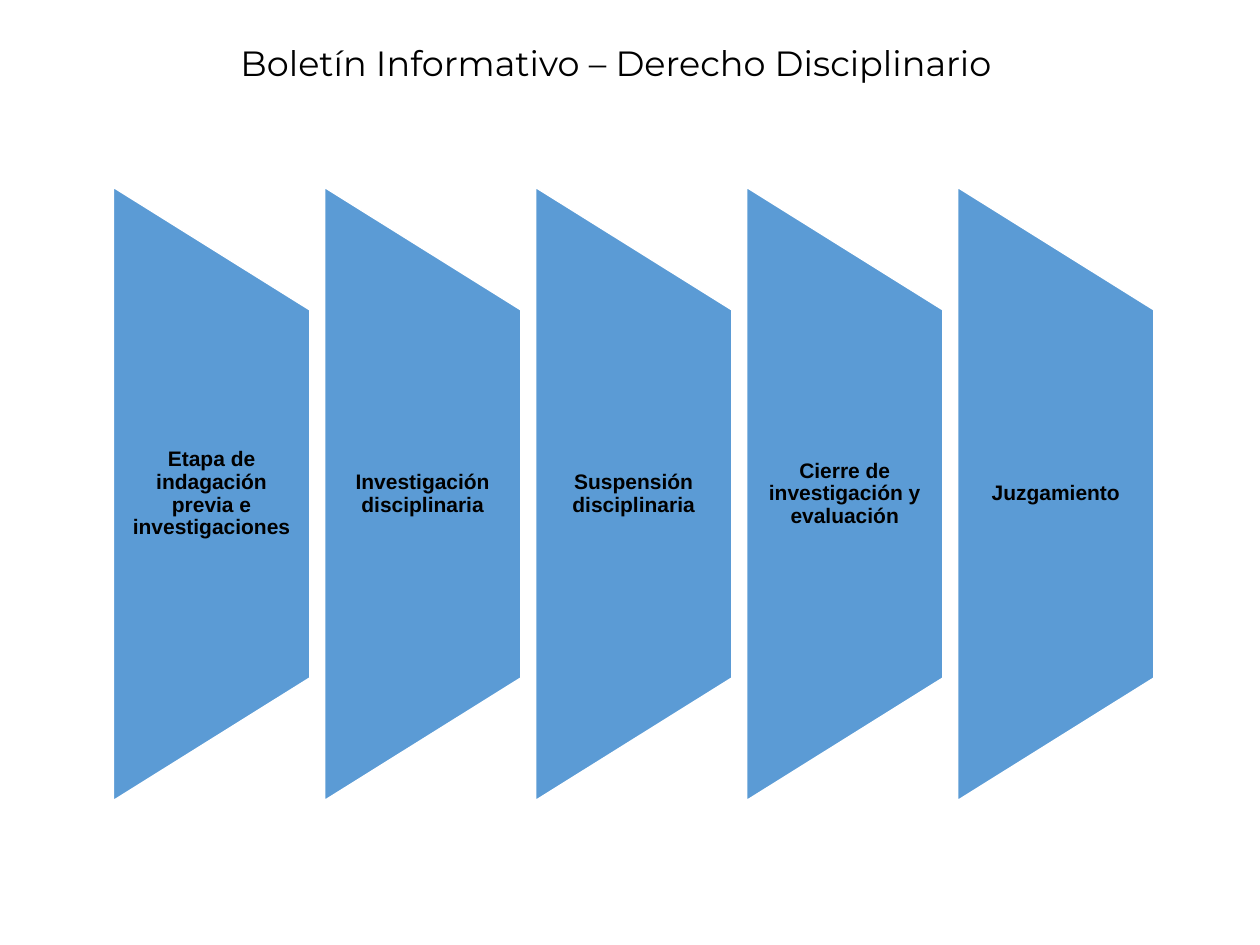
from pptx import Presentation
from pptx.dml.color import RGBColor
from pptx.enum.shapes import MSO_SHAPE as SHAPE
from pptx.enum.text import MSO_ANCHOR as ANCHOR, PP_ALIGN as ALIGN
from pptx.util import Inches, Pt

TITLE = "Boletín Informativo – Derecho Disciplinario"
STAGES = [
    "Etapa de indagación previa e investigaciones",
    "Investigación disciplinaria",
    "Suspensión disciplinaria",
    "Cierre de investigación y evaluación",
    "Juzgamiento",
]
BLUE, WHITE, BLACK = "5B9BD5", "FFFFFF", "000000"

# Stage columns, in inches
LEFT, MIDDLE = 0.9, 3.92
STAGE_W, STAGE_H, LABEL_H = 1.56, 4.87, 2.92
PITCH = 1.675


def rgb(value):
    return RGBColor.from_string(value)


def add_text(shapes, text, box, font, size, bold=False, inset=(0.1, 0.05)):
    tb = shapes.add_textbox(*map(Inches, box))
    tf = tb.text_frame
    tf.word_wrap = True
    tf.vertical_anchor = ANCHOR.MIDDLE
    tf.margin_left = tf.margin_right = Inches(inset[0])
    tf.margin_top = tf.margin_bottom = Inches(inset[1])
    p = tf.paragraphs[0]
    p.text = text
    p.alignment = ALIGN.CENTER
    p.line_spacing = 0.9
    p.font.name, p.font.size, p.font.bold = font, Pt(size), bold
    p.font.color.rgb = rgb(BLACK)


def add_stage(shapes, left, label):
    # The trapezoid is laid out flat, then turned about its centre
    flat_left = left + (STAGE_W - STAGE_H) / 2
    flat_top = MIDDLE - STAGE_W / 2
    sp = shapes.add_shape(SHAPE.FLOWCHART_MANUAL_OPERATION,
                          *map(Inches, (flat_left, flat_top, STAGE_H, STAGE_W)))
    sp.rotation = 270
    sp.shadow.inherit = False
    sp.fill.solid()
    sp.fill.fore_color.rgb = rgb(BLUE)
    sp.line.color.rgb = rgb(WHITE)
    sp.line.width = Pt(1)
    add_text(shapes, label, (left, MIDDLE - LABEL_H / 2, STAGE_W, LABEL_H),
             "Arial", 12, bold=True, inset=(0.08, 0))


prs = Presentation()
prs.slide_width, prs.slide_height = Inches(10), Inches(7.5)
s = prs.slides.add_slide(prs.slide_layouts[6])

add_text(s.shapes, TITLE, (0.5, 0.28, 8.78, 0.47), "Montserrat", 20)
stages = s.shapes.add_group_shape()
for i, label in enumerate(STAGES):
    add_stage(stages.shapes, LEFT + i * PITCH, label)

prs.save("out.pptx")
